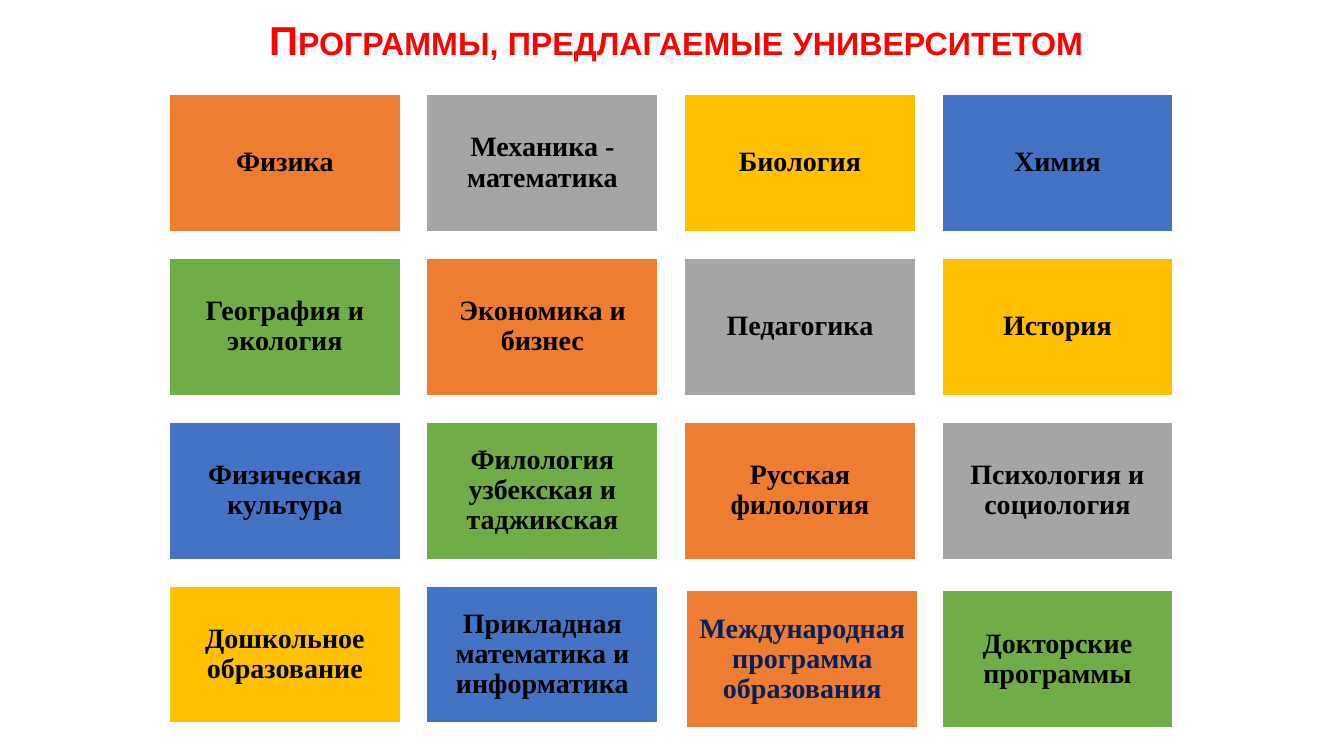
from dataclasses import dataclass

from pptx import Presentation
from pptx import util as u
from pptx.dml.color import RGBColor
from pptx.enum import shapes, text


@dataclass(frozen=True)
class Theme:
    title_font: str = "Arial"
    tile_font: str = "Times New Roman"
    title_size: float = 28.8
    tile_size: float = 20
    title_color: str = "FF0000"
    tile_text: str = "000000"
    accent_text: str = "002060"
    border: str = "FFFFFF"
    # orange, grey, yellow, blue, green
    fills: tuple = ("ED7D31", "A5A5A5", "FFC000", "4472C4", "70AD47")


theme = Theme()


def write_text(box, words, inset, font, size, color):
    """Put one bold, centred paragraph into a box and return it with its run."""
    frame = box.text_frame
    frame_format = {
        "word_wrap": True,
        "vertical_anchor": text.MSO_ANCHOR.MIDDLE,
        "margin_left": inset,
        "margin_right": inset,
        "margin_top": inset,
        "margin_bottom": inset,
    }
    for name, value in frame_format.items():
        setattr(frame, name, value)
    para = frame.paragraphs[0]
    para.alignment = text.PP_ALIGN.CENTER
    span = para.add_run()
    span.text = words
    for name, value in {"name": font, "size": u.Pt(size), "bold": True}.items():
        setattr(span.font, name, value)
    span.font.color.rgb = RGBColor.from_string(color)
    return para, span


deck = Presentation()
deck.slide_width = u.Cm(33.87)
deck.slide_height = u.Cm(19.05)
page = deck.slides.add_slide(deck.slide_layouts[6])

# Title in small capitals
title = page.shapes.add_textbox(u.Cm(5.36), u.Cm(0.13), u.Cm(23.37), u.Cm(1.73))
para, span = write_text(title, "Программы, предлагаемые университетом", u.Cm(0.13),
                        theme.title_font, theme.title_size, theme.title_color)
span.font._element.set("cap", "small")

# Grid of programmes, with fills repeating in order
programmes = [
    "Физика", "Механика - математика", "Биология", "Химия",
    "География и экология", "Экономика и бизнес", "Педагогика", "История",
    "Физическая культура", "Филология узбекская и таджикская",
    "Русская филология", "Психология и социология",
    "Дошкольное образование", "Прикладная математика и информатика",
    "Докторские программы", "Международная программа образования",
]
columns = 4
left, top = 4.23, 2.34
width, height = 5.9, 3.53
column_step, row_step = 6.49, 4.13

# The last two tiles trade columns and sit slightly off the grid
doctoral, international = 14, 15
moved = {
    doctoral: (left + 3 * column_step, 14.85),
    international: (17.27, 14.85),
}

for index, programme in enumerate(programmes):
    row, column = divmod(index, columns)
    x, y = moved.get(index, (left + column * column_step, top + row * row_step))
    tile = page.shapes.add_shape(shapes.MSO_SHAPE.RECTANGLE,
                                 u.Cm(x), u.Cm(y), u.Cm(width), u.Cm(height))
    tile.shadow.inherit = False
    tile.fill.solid()
    tile.fill.fore_color.rgb = RGBColor.from_string(theme.fills[index % len(theme.fills)])
    tile.line.color.rgb = RGBColor.from_string(theme.border)
    tile.line.width = u.Pt(3)
    color = theme.accent_text if index == international else theme.tile_text
    para, span = write_text(tile, programme, u.Cm(0.2),
                            theme.tile_font, theme.tile_size, color)
    para.line_spacing = 0.9
    para.space_after = u.Pt(7)

deck.save("out.pptx")
